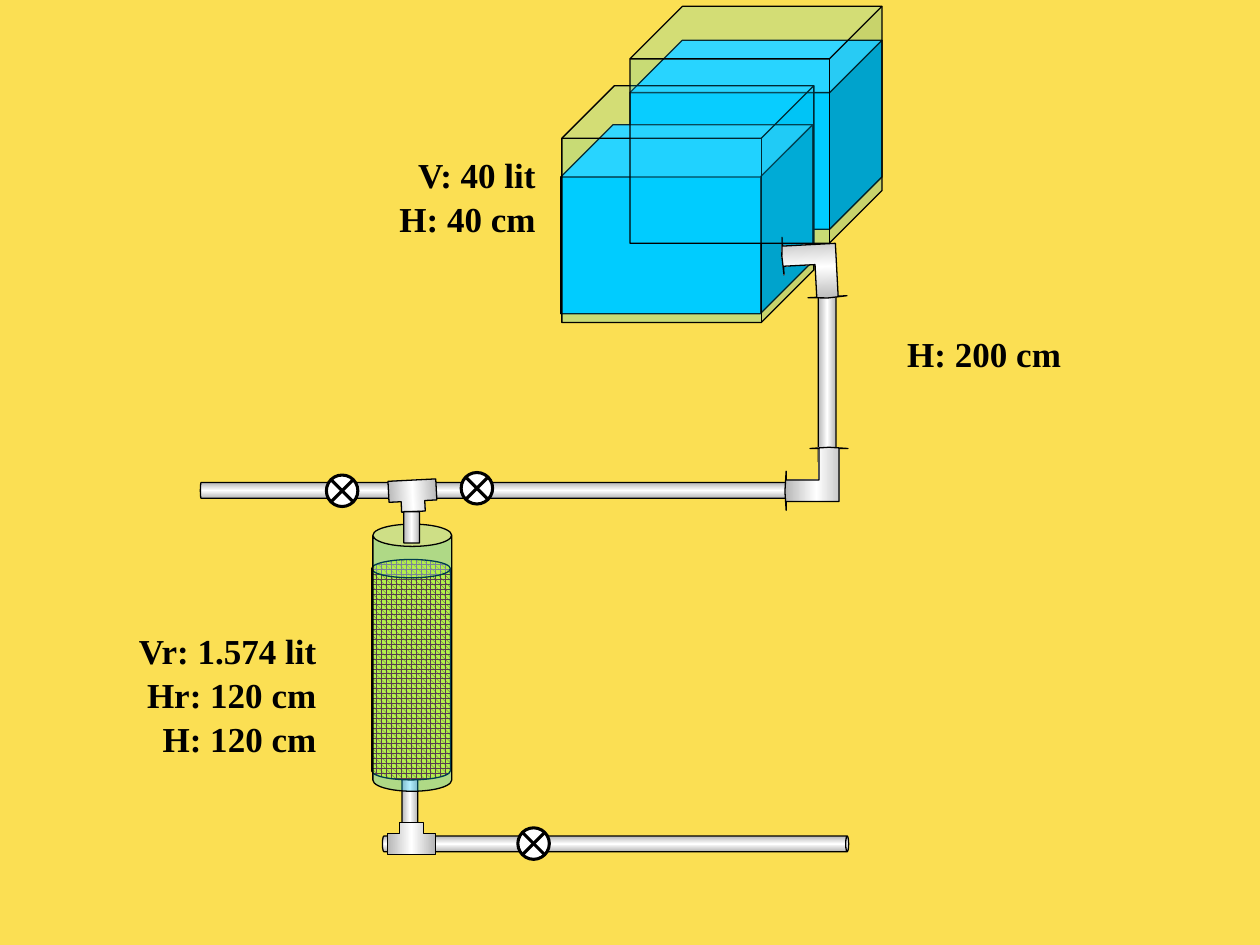
"""Draws two feed tanks, the piping and a packed column on one slide."""
from copy import deepcopy

from lxml import etree
from pptx import Presentation
from pptx import util as u
from pptx.dml.color import RGBColor
from pptx.enum import dml, shapes, text
from pptx.oxml.ns import qn

SAND = RGBColor(0xFB, 0xDF, 0x53)
BLUE = RGBColor(0x00, 0xCC, 0xFF)
GREY = RGBColor(0xB6, 0xB6, 0xB6)
WHITE = RGBColor(0xFF, 0xFF, 0xFF)
BLACK = RGBColor(0, 0, 0)
MAROON = RGBColor(0x80, 0, 0)
YELLOW = RGBColor(0xFF, 0xFF, 0)
KIND = shapes.MSO_SHAPE
BEND = [(35, 0), (20, 1), (27, 1), (27, 26), (1, 26), (1, 19), (0, 35),
        (1, 50), (1, 43), (43, 43), (43, 1), (50, 1)]


class Plant:
    """Style and slide, measured on a grid of 100 columns by 75 rows."""

    font, size, thin, thick, bore, valve_size = "Times New Roman", 20, 0.75, 1.75, 1.25, 2.5

    def __init__(self, deck):
        self.slide = deck.slides.add_slide(deck.slide_layouts[6])
        self.col, self.row = deck.slide_width / 100, deck.slide_height / 75
        fill = self.slide.background.fill
        fill.solid()
        fill.fore_color.rgb = SAND

    def place(self, x, y, w, h):
        return [u.Emu(round(n)) for n in
                (x * self.col, y * self.row, w * self.col, h * self.row)]

    def edge(self, shape, width):
        shape.shadow.inherit = False
        shape.line.color.rgb = BLACK
        shape.line.width = u.Pt(width)

    def draw(self, kind, box, adjust=(), turn=0, width=thin):
        shape = self.slide.shapes.add_shape(kind, *self.place(*box))
        for i, value in enumerate(adjust):
            shape.adjustments[i] = value
        shape.rotation = turn
        self.edge(shape, width)
        return shape

    def paint(self, shape, color, alpha=100):
        shape.fill.solid()
        shape.fill.fore_color.rgb = color
        if alpha < 100:
            tint = shape._element.spPr.find(".//" + qn("a:srgbClr"))
            etree.SubElement(tint, qn("a:alpha")).set("val", str(alpha * 1000))

    def metal(self, shape):
        shape.fill.gradient()
        shape.fill.gradient_angle = 0
        stops = shape._element.spPr.find(".//" + qn("a:gsLst"))
        stops.insert(1, deepcopy(stops[0]))
        for i, stop in enumerate(shape.fill.gradient_stops):
            stop.position = i / 2
            stop.color.rgb = WHITE if i == 1 else GREY

    def water(self, x, y):
        self.paint(self.draw(KIND.CUBE, (x, y, 20, 15), [0.277]), BLUE)

    def tank(self, x, y):
        self.paint(self.draw(KIND.CUBE, (x, y, 20, 18.8), [0.222]), BLUE, 20)

    def pipe(self, x, y, long, rim, flat=False, bore=bore):
        if flat:
            x, y = x + (long - bore) / 2, y - (long - bore) / 2
        self.metal(self.draw(KIND.CAN, (x, y, bore, long), [rim], 90 if flat else 0))

    def column(self, x, y, w, h, rim):
        self.paint(self.draw(KIND.CAN, (x, y, w, h), [rim]), BLUE, 30)

    def bed(self, x, y, w, h, rim):
        fill = self.draw(KIND.CAN, (x, y, w, h), [rim]).fill
        fill.patterned()
        fill.pattern = dml.MSO_PATTERN.SPHERE
        fill.fore_color.rgb = MAROON
        fill.back_color.rgb = YELLOW

    def elbow(self, x, y, turn=0):
        pen = self.slide.shapes.build_freeform(*BEND[0], scale=self.col / 10)
        pen.add_line_segments(BEND[1:], close=True)
        shape = pen.convert_to_shape(*self.place(x, y, 0, 0)[:2])
        shape.rotation = turn
        self.edge(shape, self.thin)
        self.metal(shape)

    def tee(self, x, y, turn=0):
        self.metal(self.draw(KIND.UP_ARROW_CALLOUT, (x, y, 3.8, 2.5),
                             [0.75, 0.375, 0, 0.667], turn))

    def valve(self, x, y):
        size = self.valve_size
        self.paint(self.draw(KIND.FLOWCHART_SUMMING_JUNCTION, (x, y, size, size),
                             width=self.thick), WHITE)

    def label(self, x, y, h, *lines):
        frame = self.slide.shapes.add_textbox(*self.place(x, y, 17.1, h)).text_frame
        frame.word_wrap = True
        frame.text = "\n".join(lines)
        for para in frame.paragraphs:
            para.alignment = text.PP_ALIGN.RIGHT
            para.line_spacing = 1.05
            para._p.get_or_add_pPr().set("rtl", "1")
            font = para.runs[0].font
            font.name, font.size, font.bold = self.font, u.Pt(self.size), True
            font.color.rgb = BLACK


def main():
    deck = Presentation()
    deck.slide_width, deck.slide_height = u.Inches(10), u.Inches(7.5)
    plant = Plant(deck)
    plant.water(50, 3.2)
    plant.water(44.5, 9.9)
    plant.pipe(31.9, 60.9, 5, 0.026)
    plant.bed(29.5, 44.4, 6.25, 17.5, 0.233)
    plant.pipe(15.9, 38.3, 15.8, 0.08, flat=True)
    plant.column(29.6, 41.6, 6.25, 21.2, 0.283)
    plant.pipe(33.3, 38.3, 30, 0.152, flat=True)
    plant.pipe(64.95, 22.5, 14.2, 0.064, bore=1.4)
    plant.pipe(30.35, 66.35, 37, 0.188, flat=True)
    plant.elbow(62.3, 35.5)
    plant.tank(44.6, 6.8)
    plant.elbow(62.1, 18.7, 267)
    plant.tee(30.75, 65.3)
    plant.valve(25.9, 37.7)
    plant.valve(41.1, 65.7)
    plant.tee(30.85, 38.1, 177.1)
    plant.label(9, 49.3, 15, "Vr: 1.574 lit", "Hr: 120 cm", "H: 120 cm")
    plant.pipe(32.05, 40.6, 2.5, 0.013)
    plant.tank(50, 0.5)
    plant.label(26.4, 11.5, 7.9, "V: 40 lit", "H: 40 cm")
    plant.label(68.1, 25.7, 7.9, "H: 200 cm")
    plant.valve(36.6, 37.5)
    deck.save("out.pptx")


if __name__ == "__main__":
    main()
